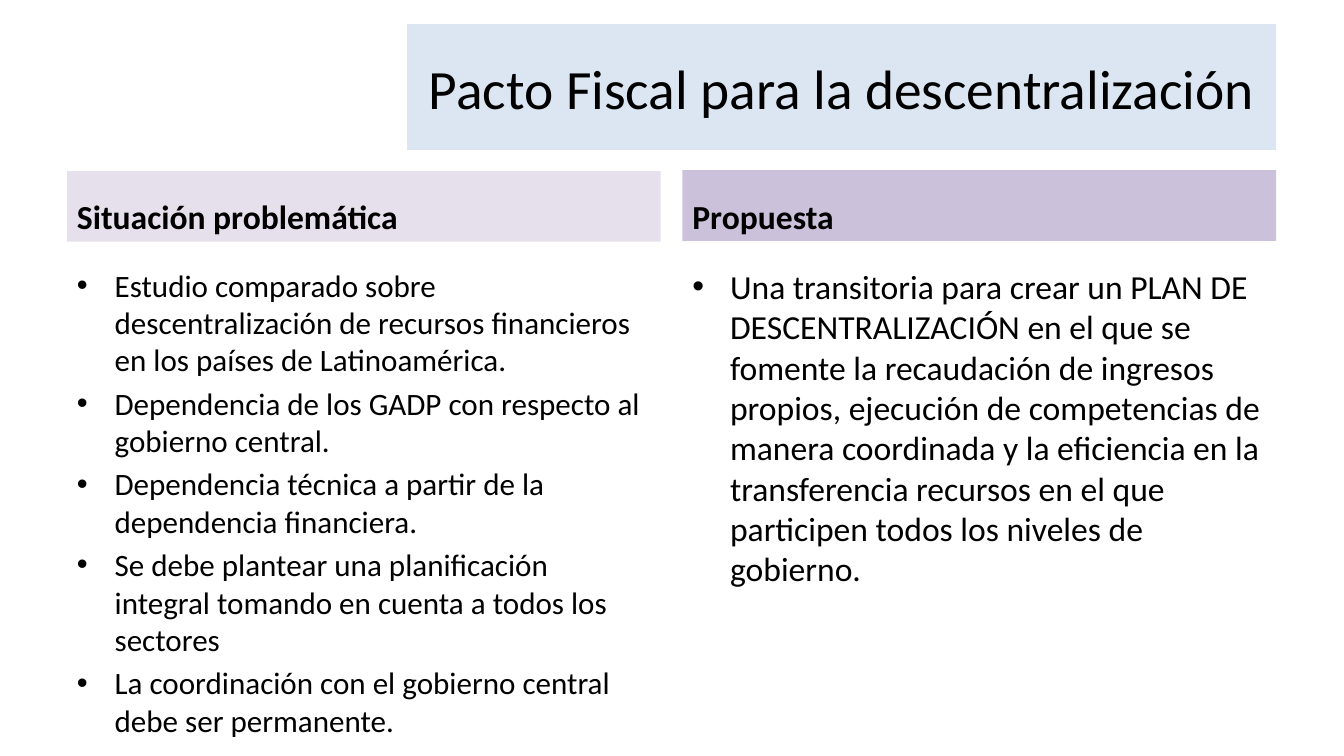
"""Build the slide on the fiscal pact for decentralization."""
from dataclasses import dataclass

import pptx
import pptx.dml.color
import pptx.enum.shapes
import pptx.enum.text
import pptx.util
from lxml import etree
from pptx.util import Cm


@dataclass(frozen=True)
class Theme:
    """Colours and type sizes of the slide."""

    font: str = "Calibri"
    text: str = "000000"
    title_fill: str = "DCE6F2"
    problem_fill: str = "E6E0EC"
    proposal_fill: str = "CCC1DA"
    title_size: float = 39.6
    heading_size: float = 24
    problem_size: float = 22.2
    proposal_size: float = 24


@dataclass(frozen=True)
class Column:
    """A heading band with the bulleted points below it."""

    left: float
    heading_top: float
    heading: str
    fill: str
    size: float
    points: tuple[str, ...]


THEME = Theme()
COLUMN_WIDTH = 14.96
INDENT = 0.95
COLUMNS = (
    Column(1.69, 4.31, "Situación problemática", THEME.problem_fill, THEME.problem_size, (
        "Estudio comparado sobre descentralización de recursos financieros "
        "en los países de Latinoamérica.",
        "Dependencia de los GADP con respecto al gobierno central.",
        "Dependencia técnica a partir de la dependencia financiera.",
        "Se debe plantear una planificación integral tomando en cuenta a todos los sectores",
        "La coordinación con el gobierno central debe ser permanente.",
    )),
    Column(17.2, 4.29, "Propuesta", THEME.proposal_fill, THEME.proposal_size, (
        "Una transitoria para crear un PLAN DE DESCENTRALIZACIÓN en el que se fomente "
        "la recaudación de ingresos propios, ejecución de competencias de manera coordinada "
        "y la eficiencia en la transferencia recursos en el que participen todos los niveles "
        "de gobierno.",
    )),
)


def style(para, size: float, bold: bool = False) -> None:
    """Set the font of a paragraph."""
    para.font.name = THEME.font
    para.font.size = pptx.util.Pt(size)
    para.font.bold = bold
    para.font.color.rgb = pptx.dml.color.RGBColor.from_string(THEME.text)


def add_band(page, left: float, top: float, width: float, height: float, fill: str):
    """Add a filled rectangle and return it."""
    band = page.shapes.add_shape(
        pptx.enum.shapes.MSO_SHAPE.RECTANGLE, Cm(left), Cm(top), Cm(width), Cm(height))
    band.shadow.inherit = False
    band.fill.solid()
    band.fill.fore_color.rgb = pptx.dml.color.RGBColor.from_string(fill)
    band.line.fill.background()
    return band


def add_title(page, text: str) -> None:
    """Add the title band."""
    frame = add_band(page, 10.26, 0.61, 21.9, 3.17, THEME.title_fill).text_frame
    frame.vertical_anchor = pptx.enum.text.MSO_ANCHOR.MIDDLE
    para = frame.paragraphs[0]
    para.text = text
    para.alignment = pptx.enum.text.PP_ALIGN.CENTER
    style(para, THEME.title_size)


def add_bullet(para) -> None:
    """Give a paragraph a hanging round bullet."""
    properties = para._p.get_or_add_pPr()
    properties.set("marL", str(Cm(INDENT)))
    properties.set("indent", str(-Cm(INDENT)))
    namespace = properties.nsmap["a"]
    etree.SubElement(properties, f"{{{namespace}}}buFont", typeface="Arial")
    etree.SubElement(properties, f"{{{namespace}}}buChar", char="•")


def add_column(page, column: Column) -> None:
    """Add a heading band and its bulleted list."""
    band = add_band(page, column.left, column.heading_top, COLUMN_WIDTH, 1.78, column.fill)
    band.text_frame.vertical_anchor = pptx.enum.text.MSO_ANCHOR.BOTTOM
    heading = band.text_frame.paragraphs[0]
    heading.text = column.heading
    heading.alignment = pptx.enum.text.PP_ALIGN.LEFT
    style(heading, THEME.heading_size, bold=True)

    box = page.shapes.add_textbox(Cm(column.left), Cm(6.58), Cm(COLUMN_WIDTH), Cm(10.44))
    frame = box.text_frame
    frame.word_wrap = True
    for index, point in enumerate(column.points):
        para = frame.add_paragraph() if index else frame.paragraphs[0]
        para.text = point
        if index:
            para.space_before = pptx.util.Pt(round(column.size * 0.2, 1))
        add_bullet(para)
        style(para, column.size)


def main() -> None:
    """Build and save the deck."""
    deck = pptx.Presentation()
    deck.slide_width, deck.slide_height = Cm(33.87), Cm(19.05)
    page = deck.slides.add_slide(deck.slide_layouts[6])
    add_title(page, "Pacto Fiscal para la descentralización")
    for column in COLUMNS:
        add_column(page, column)
    deck.save("out.pptx")


if __name__ == "__main__":
    main()
